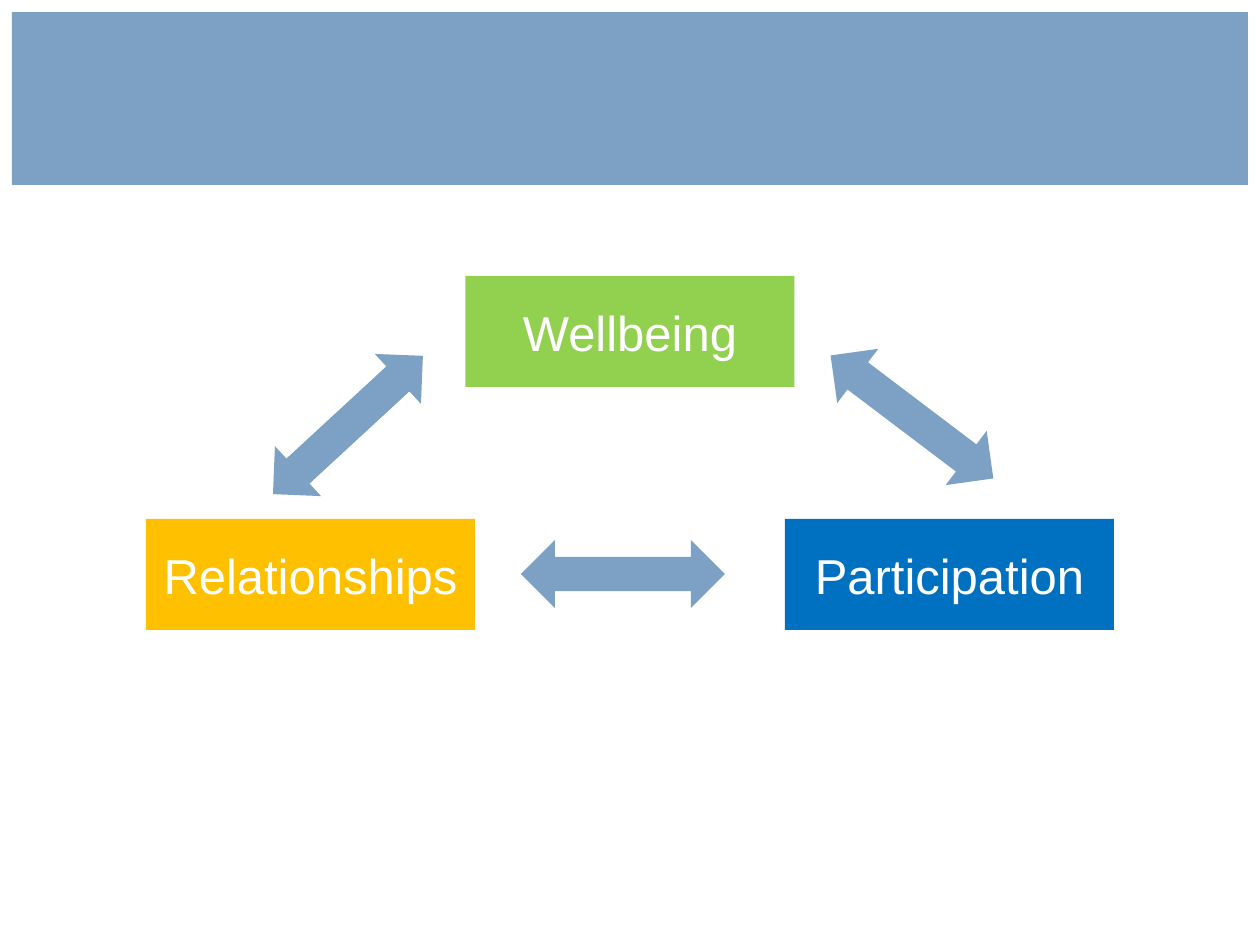
from pptx import Presentation
from pptx import util as u
from pptx.dml.color import RGBColor
from pptx.enum import shapes, text

PX = u.Inches(1) / 126
STEEL, WHITE = "7DA1C4", "FFFFFF"
LABEL_FONT = {"name": "Arial", "size": u.Pt(28)}
LABEL_FRAME = {"word_wrap": True, "vertical_anchor": text.MSO_ANCHOR.MIDDLE}


def px(length):
    """Turn pixels into EMU."""
    return u.Emu(round(length * PX))


def color(hex_value):
    """Turn a hex string into a colour."""
    return RGBColor.from_string(hex_value)


def apply(target, values):
    """Set every attribute in values on target."""
    for name, value in values.items():
        setattr(target, name, value)


def add_flat(slide, kind, box, fill):
    """Add a plain filled shape without line or shadow."""
    flat = slide.shapes.add_shape(kind, *map(px, box))
    flat.shadow.inherit = False
    flat.fill.solid()
    flat.fill.fore_color.rgb = color(fill)
    flat.line.fill.background()
    return flat


def add_banner(slide, box):
    """Draw the empty band at the top."""
    add_flat(slide, shapes.MSO_SHAPE.RECTANGLE, box, STEEL)


def add_theme(slide, box, label, fill):
    """Draw one labelled theme."""
    theme = add_flat(slide, shapes.MSO_SHAPE.RECTANGLE, box, fill)
    apply(theme.text_frame, LABEL_FRAME)
    paragraph = theme.text_frame.paragraphs[0]
    paragraph.text = label
    paragraph.alignment = text.PP_ALIGN.CENTER
    apply(paragraph.font, LABEL_FONT)
    paragraph.font.color.rgb = color(WHITE)


def add_cycle(slide, box):
    """Draw the triangle of themes and the double arrows between them."""
    left, top, width, height = box
    theme_w, theme_h = 329, 111
    right, bottom = width - theme_w, height - theme_h
    themes = [
        ("Wellbeing", "92D050", right / 2, 0),
        ("Relationships", "FFC000", 0, bottom),
        ("Participation", "0070C0", right, bottom),
    ]
    for label, fill, x, y in themes:
        add_theme(slide, (left + x, top + y, theme_w, theme_h), label, fill)
    for x, y, turn in [(100, 115, 317.3), (664, 107, 37.1), (375, 264, 0)]:
        arrow = add_flat(slide, shapes.MSO_SHAPE.LEFT_RIGHT_ARROW,
                         (left + x, top + y, 204, 68), STEEL)
        arrow.rotation = turn


def main():
    """Build and save the slide."""
    deck = Presentation()
    apply(deck, {"slide_width": px(1260), "slide_height": px(945)})
    slide = deck.slides.add_slide(deck.slide_layouts[6])
    add_banner(slide, (12, 12, 1236, 173))
    add_cycle(slide, (146, 276, 968, 354))
    deck.save("out.pptx")


if __name__ == "__main__":
    main()
